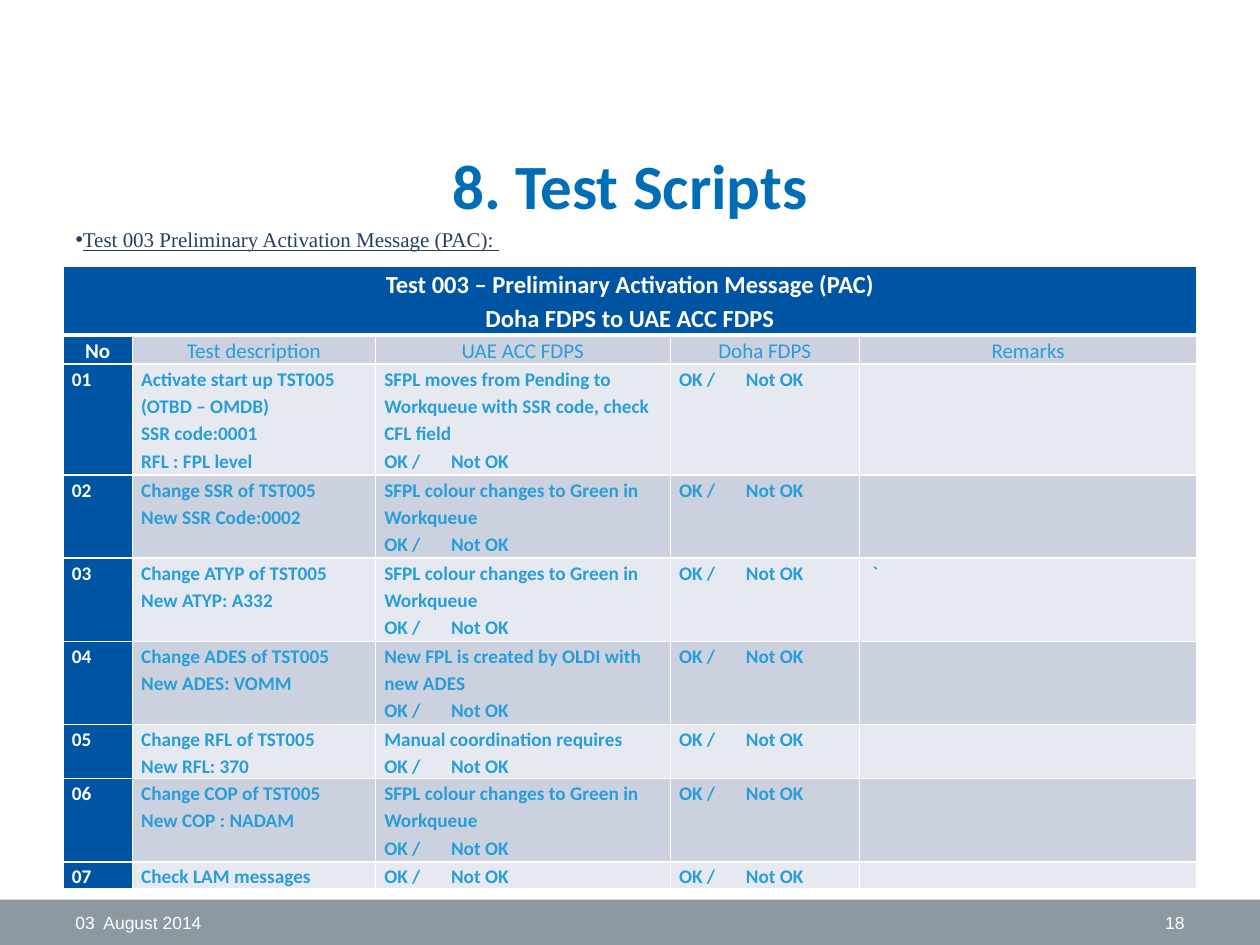
from lxml import etree
from pptx import Presentation
from pptx.dml.color import RGBColor
from pptx.enum.shapes import MSO_SHAPE
from pptx.enum.text import MSO_ANCHOR, MSO_AUTO_SIZE, PP_ALIGN
from pptx.oxml.ns import qn
from pptx.util import Inches, Pt

RECTANGLE = MSO_SHAPE.RECTANGLE
TOP, MIDDLE = MSO_ANCHOR.TOP, MSO_ANCHOR.MIDDLE
NO_AUTOFIT = MSO_AUTO_SIZE.NONE
LEFT, CENTER, RIGHT = PP_ALIGN.LEFT, PP_ALIGN.CENTER, PP_ALIGN.RIGHT

WHITE = RGBColor(0xFF, 0xFF, 0xFF)
GRAY = RGBColor(0x8C, 0x99, 0xA1)
TITLE_BLUE = RGBColor(0x00, 0x6E, 0xB7)
NAVY = RGBColor(0x24, 0x40, 0x61)
HEADER_BLUE = RGBColor(0x00, 0x54, 0xA4)
TEXT_BLUE = RGBColor(0x27, 0x9D, 0xD9)
BANDS = [RGBColor(0xE7, 0xE9, 0xF0), RGBColor(0xCC, 0xD1, 0xE0)]

CHOICE = "OK /\tNot OK"
GREEN = "SFPL colour changes to Green in Workqueue\n" + CHOICE
HEADING = "Test 003 – Preliminary Activation Message (PAC)\nDoha FDPS to UAE ACC FDPS"
COLUMN_NAMES = ["No", "Test description", "UAE ACC FDPS", "Doha FDPS", "Remarks"]
TESTS = [
    ("Activate start up TST005\n(OTBD – OMDB)\nSSR code:0001\nRFL : FPL level",
     "SFPL moves from Pending to Workqueue with SSR code, check CFL field\n" + CHOICE, ""),
    ("Change SSR of TST005\nNew SSR Code:0002", GREEN, ""),
    ("Change ATYP of TST005\nNew ATYP: A332", GREEN, " `"),
    ("Change ADES of TST005\nNew ADES: VOMM",
     "New FPL is created by OLDI with new ADES\n" + CHOICE, ""),
    ("Change RFL of TST005\nNew RFL: 370", "Manual coordination requires\n" + CHOICE, ""),
    ("Change COP of TST005\nNew COP : NADAM", GREEN, ""),
    ("Check LAM messages", CHOICE, ""),
]
COLUMN_WIDTHS = [0.55, 1.93, 2.34, 1.5, 2.68]
ROW_HEIGHTS = [0.55, 0.23, 0.88, 0.66, 0.66, 0.66, 0.43, 0.66, 0.21]


def style_font(font, name, size, color, bold=False):
    font.name = name
    font.size = Pt(size)
    font.color.rgb = color
    font.bold = bold


def fill_cell(cell, text, fill, color, size, bold, align, borders):
    """Write one table cell; borders maps an edge tag to its width in points."""
    cell.margin_left = cell.margin_right = Inches(0.07)
    cell.margin_top = cell.margin_bottom = 0
    properties = cell._tc.get_or_add_tcPr()
    for edge, width in borders.items():
        line = etree.SubElement(properties, qn(f"a:{edge}"), w=str(Pt(width)))
        solid = etree.SubElement(line, qn("a:solidFill"))
        etree.SubElement(solid, qn("a:srgbClr"), val=str(WHITE))
    cell.fill.solid()
    cell.fill.fore_color.rgb = fill
    cell.text_frame.text = text
    for paragraph in cell.text_frame.paragraphs:
        paragraph.alignment = align
        paragraph.line_spacing = 1.15
        if "\t" in paragraph.text:
            tabs = etree.SubElement(paragraph._p.get_or_add_pPr(), qn("a:tabLst"))
            etree.SubElement(tabs, qn("a:tab"), pos=str(Inches(0.53)), algn="l")
        for run in paragraph.runs:
            style_font(run.font, "Calibri", size, color, bold)
        if not text:
            etree.SubElement(paragraph._p, qn("a:endParaRPr"), sz=str(size * 100))


presentation = Presentation()
presentation.slide_width = Inches(10)
presentation.slide_height = Inches(7.5)
slide = presentation.slides.add_slide(presentation.slide_layouts[1])

# Footer band with date and page number
band = slide.shapes.add_shape(RECTANGLE, 0, Inches(7.14), Inches(10), Inches(0.36))
band.shadow.inherit = False
band.fill.solid()
band.fill.fore_color.rgb = GRAY
band.line.fill.background()
for left, text, align in [(0.5, "03  August 2014", LEFT), (7.17, "18", RIGHT)]:
    footer = slide.shapes.add_textbox(Inches(left), Inches(7.14), Inches(2.33), Inches(0.36))
    footer.text_frame.word_wrap = True
    footer.text_frame.vertical_anchor = MIDDLE
    footer.text_frame.text = text
    paragraph = footer.text_frame.paragraphs[0]
    paragraph.alignment = align
    style_font(paragraph.runs[0].font, "Arial", 10, WHITE)

# Title and bullet line
title, body = slide.shapes.title, slide.placeholders[1]
for shape, text, top, height, anchor in [
    (title, "8. Test Scripts", 1.15, 0.63, MIDDLE),
    (body, "Test 003 Preliminary Activation Message (PAC): ", 1.78, 0.3, TOP),
]:
    shape.left, shape.top = Inches(0.5), Inches(top)
    shape.width, shape.height = Inches(9), Inches(height)
    frame = shape.text_frame
    frame.text = text
    frame.auto_size = NO_AUTOFIT
    frame.vertical_anchor = anchor
    frame.margin_top = frame.margin_bottom = Inches(0.02)

title_paragraph = title.text_frame.paragraphs[0]
title_paragraph.alignment = CENTER
style_font(title_paragraph.runs[0].font, "Calibri", 36, TITLE_BLUE, True)

bullet_paragraph = body.text_frame.paragraphs[0]
bullet_paragraph.space_before = Pt(0)
bullet_properties = bullet_paragraph._p.get_or_add_pPr()
bullet_properties.set("marL", "0")
bullet_properties.set("indent", "0")
etree.SubElement(bullet_properties, qn("a:buChar"), char="•")
bullet_font = bullet_paragraph.runs[0].font
style_font(bullet_font, "Times New Roman", 12, NAVY)
bullet_font.underline = True

# Test table
table = slide.shapes.add_table(
    len(ROW_HEIGHTS), len(COLUMN_WIDTHS), Inches(0.5), Inches(2.11),
    Inches(sum(COLUMN_WIDTHS)), Inches(sum(ROW_HEIGHTS)),
).table
for column, width in zip(table.columns, COLUMN_WIDTHS):
    column.width = Inches(width)
for row, height in zip(table.rows, ROW_HEIGHTS):
    row.height = Inches(height)

thin = {"lnL": 1, "lnR": 1, "lnT": 1, "lnB": 1}
table.cell(0, 0).merge(table.cell(0, len(COLUMN_WIDTHS) - 1))
fill_cell(table.cell(0, 0), HEADING, HEADER_BLUE, WHITE, 14, True, CENTER, {**thin, "lnB": 3})

for index, name in enumerate(COLUMN_NAMES):
    first = index == 0
    fill_cell(table.cell(1, index), name, HEADER_BLUE if first else BANDS[1],
              WHITE if first else TEXT_BLUE, 12, first, CENTER, {**thin, "lnT": 3})

for number, (description, result, remark) in enumerate(TESTS, start=1):
    values = [f"{number:02}", description, result, CHOICE, remark]
    for index, value in enumerate(values):
        first = index == 0
        fill_cell(table.cell(number + 1, index), value,
                  HEADER_BLUE if first else BANDS[(number - 1) % 2],
                  WHITE if first else TEXT_BLUE, 11, True, LEFT, thin)

presentation.save("out.pptx")
